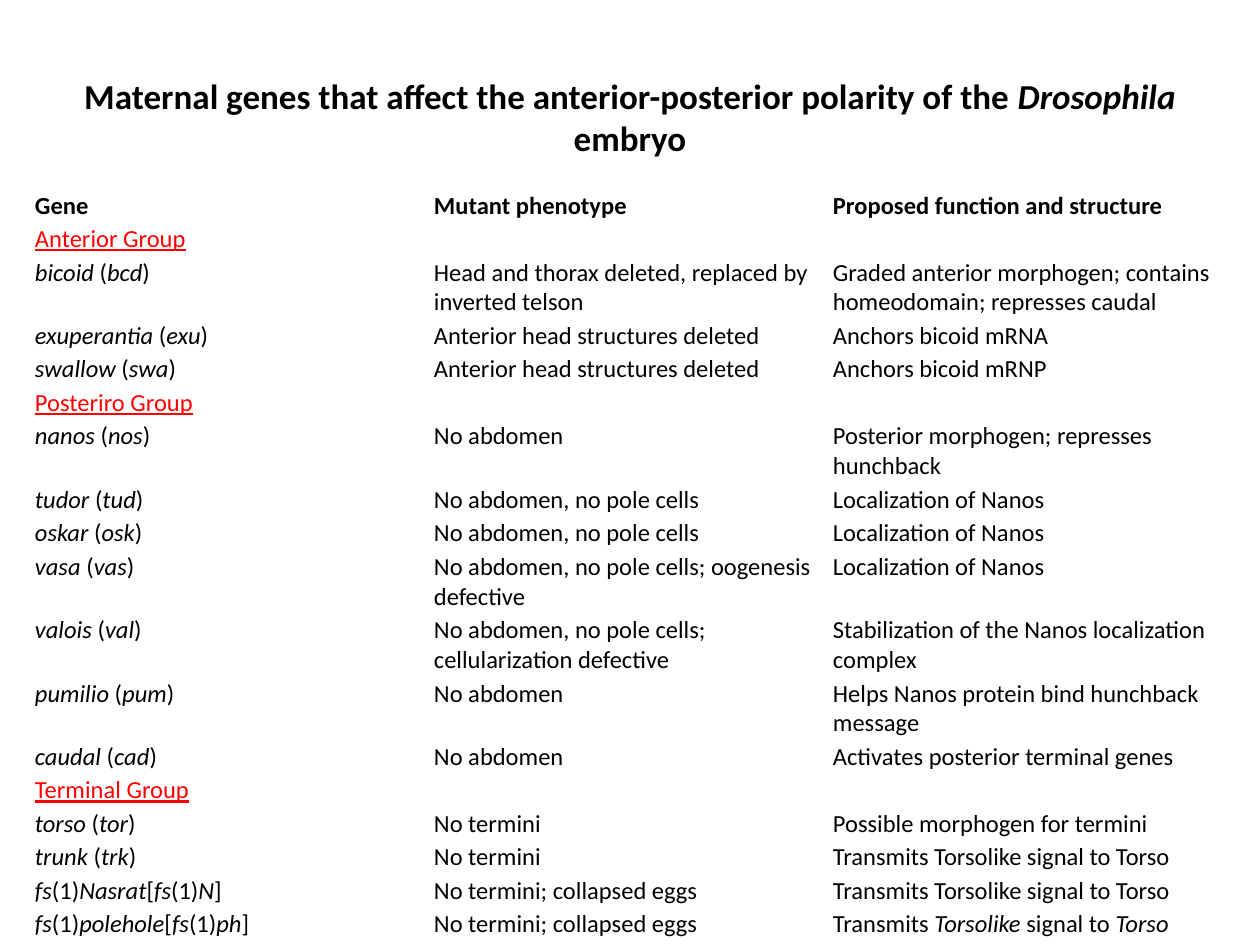
from pptx import Presentation
from pptx.dml.color import RGBColor
from pptx.enum.text import MSO_ANCHOR, PP_ALIGN
from pptx.util import Pt

BLACK = RGBColor(0x00, 0x00, 0x00)
RED = RGBColor(0xFF, 0x00, 0x00)
FONT = "Calibri"
CENTER = PP_ALIGN.CENTER
LEFT = PP_ALIGN.LEFT
MIDDLE = MSO_ANCHOR.MIDDLE
TOP = MSO_ANCHOR.TOP

COL_W = 228
ROW_H = 19.15
TALL_H = 36.25

TITLE = ("Maternal genes that affect the anterior-posterior polarity "
         "of the *Drosophila* embryo")
HEADS = ("Gene", "Mutant phenotype", "Proposed function and structure")
GROUPS = {
    "Anterior Group": [
        ("*bicoid* (*bcd*)", "Head and thorax deleted, replaced by inverted telson",
         "Graded anterior morphogen; contains homeodomain; represses caudal"),
        ("*exuperantia* (*exu*)", "Anterior head structures deleted",
         "Anchors bicoid mRNA"),
        ("*swallow* (*swa*)", "Anterior head structures deleted",
         "Anchors bicoid mRNP"),
    ],
    "Posteriro Group": [
        ("*nanos* (*nos*)", "No abdomen",
         "Posterior morphogen; represses hunchback"),
        ("*tudor* (*tud*)", "No abdomen, no pole cells", "Localization of Nanos"),
        ("*oskar* (*osk*)", "No abdomen, no pole cells", "Localization of Nanos"),
        ("*vasa* (*vas*)", "No abdomen, no pole cells; oogenesis defective",
         "Localization of Nanos"),
        ("*valois* (*val*)", "No abdomen, no pole cells; cellularization defective",
         "Stabilization of the Nanos localization complex"),
        ("*pumilio* (*pum*)", "No abdomen",
         "Helps Nanos protein bind hunchback message"),
        ("*caudal* (*cad*)", "No abdomen", "Activates posterior terminal genes"),
    ],
    "Terminal Group": [
        ("*torso* (*tor*)", "No termini", "Possible morphogen for termini"),
        ("*trunk* (*trk*)", "No termini", "Transmits Torsolike signal to Torso"),
        ("*fs*(1)*Nasrat*[*fs*(1)*N*]", "No termini; collapsed eggs",
         "Transmits Torsolike signal to Torso"),
        ("*fs*(1)*polehole*[*fs*(1)*ph*]", "No termini; collapsed eggs",
         "Transmits *Torsolike* signal to *Torso*"),
    ],
}
TALL_GENES = ("*bicoid*", "*nanos*", "*vasa*", "*valois*", "*pumilio*")


def put_text(frame, text, size=14, color=BLACK, bold=False, under=False,
             align=LEFT):
    """Write text into the frame; parts between asterisks are italic."""
    para = frame.paragraphs[0]
    para.alignment = align
    for i, part in enumerate(text.split("*")):
        if not part:
            continue
        run = para.add_run()
        run.text = part
        font = run.font
        font.name = FONT
        font.size = Pt(size)
        font.color.rgb = color
        font.bold = bold
        font.italic = i % 2 == 1
        font.underline = under


def add_title(slide):
    title = slide.shapes.title
    title.left, title.top = Pt(36), Pt(21.6)
    title.width, title.height = Pt(648), Pt(90)
    title.text_frame.vertical_anchor = MIDDLE
    put_text(title.text_frame, TITLE, size=20, bold=True, align=CENTER)


def clear_cell(cell):
    cell.fill.background()
    cell.vertical_anchor = TOP
    cell.margin_left = cell.margin_right = Pt(2)
    cell.margin_top = cell.margin_bottom = Pt(1)


def fill_row(table, row, texts, **style):
    for col, text in enumerate(texts):
        put_text(table.cell(row, col).text_frame, text, **style)


def add_genes(slide):
    count = 1 + sum(1 + len(genes) for genes in GROUPS.values())
    frame = slide.shapes.add_table(count, len(HEADS), Pt(18), Pt(108),
                                   Pt(COL_W * len(HEADS)), Pt(ROW_H * count))
    table = frame.table
    table.first_row = table.horz_banding = False
    for col in table.columns:
        col.width = Pt(COL_W)
    for row in table.rows:
        row.height = Pt(ROW_H)
    for cell in table.iter_cells():
        clear_cell(cell)

    fill_row(table, 0, HEADS, bold=True)
    row = 1
    for group, genes in GROUPS.items():
        table.cell(row, 0).merge(table.cell(row, len(HEADS) - 1))
        fill_row(table, row, [group], color=RED, under=True)
        for row, gene in enumerate(genes, row + 1):
            fill_row(table, row, gene)
            if gene[0].startswith(TALL_GENES):
                table.rows[row].height = Pt(TALL_H)
        row += 1


def main():
    prs = Presentation()
    prs.slide_width, prs.slide_height = Pt(720), Pt(540)
    slide = prs.slides.add_slide(prs.slide_layouts[5])
    add_title(slide)
    add_genes(slide)
    prs.save("out.pptx")


if __name__ == "__main__":
    main()
